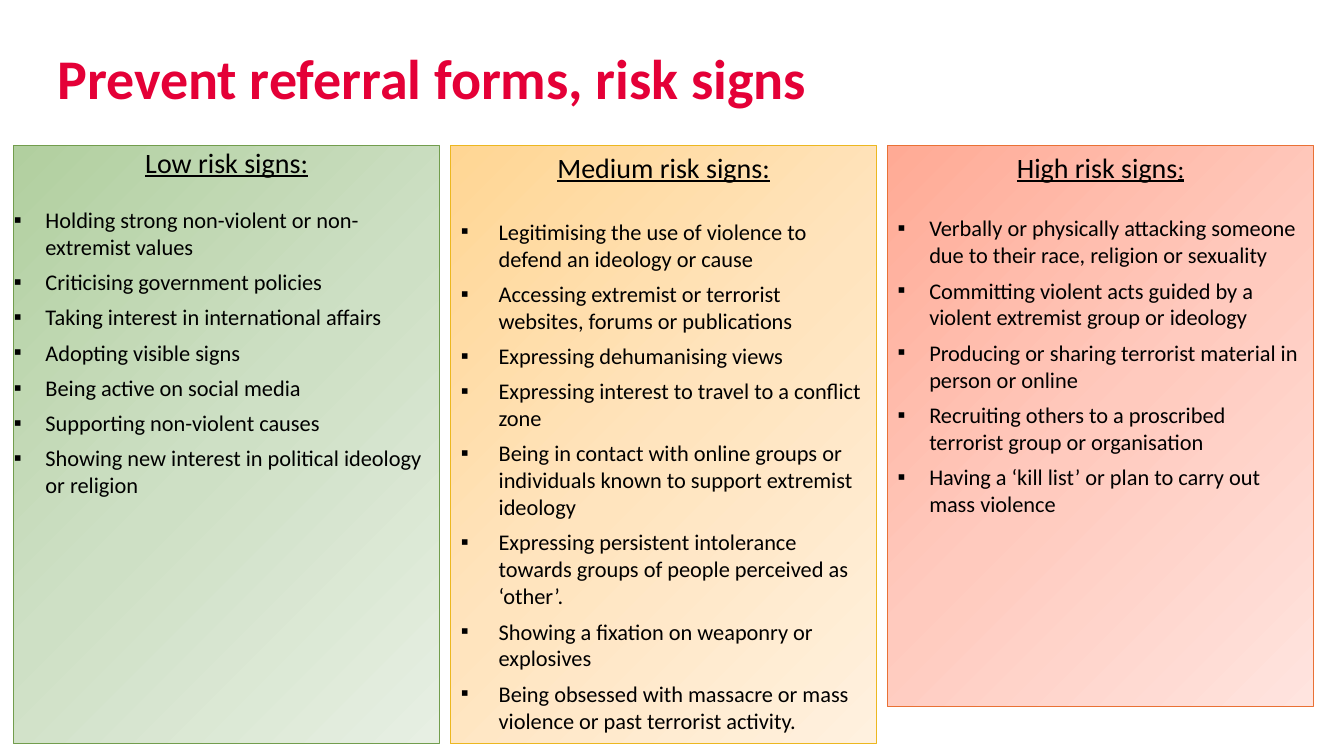
import copy
import pptx
import pptx.util
import pptx.dml.color
import pptx.enum.shapes
import pptx.enum.text
import pptx.oxml
import pptx.oxml.ns

Pt = pptx.util.Pt

# Content
HEADLINE = "Prevent referral forms, risk signs"
RISK_LEVELS = [
    {
        "heading": [("Low risk signs:", 20)],
        "signs": [
            "Holding strong non-violent or non-extremist values",
            "Criticising government policies",
            "Taking interest in international affairs",
            "Adopting visible signs",
            "Being active on social media",
            "Supporting non-violent causes",
            "Showing new interest in political ideology or religion",
        ],
        "gradient": ("B1CF9F", "CEE0C5", "E7EFE3"), "outline": "729D4D",
        "height": 427.7, "inset": (0, 0), "indent": 22.5, "heading_gap": 19.5,
    },
    {
        "heading": [("Medium risk signs:", 20)],
        "signs": [
            "Legitimising the use of violence to defend an ideology or cause",
            "Accessing extremist or terrorist websites, forums or publications",
            "Expressing dehumanising views",
            "Expressing interest to travel to a conflict zone",
            "Being in contact with online groups or individuals known to support extremist ideology",
            "Expressing persistent intolerance towards groups of people perceived as ‘other’.",
            "Showing a fixation on weaponry or explosives",
            "Being obsessed with massacre or mass violence or past terrorist activity.",
        ],
        "gradient": ("FFD694", "FFE4BE", "FFF1DF"), "outline": "ECB720",
        "height": 427.7, "inset": (7.2, 3.6), "indent": 27, "heading_gap": 24.4,
    },
    {
        "heading": [("High risk signs", 20), (":", 18)],
        "signs": [
            "Verbally or physically attacking someone due to their race, religion or sexuality",
            "Committing violent acts guided by a violent extremist group or ideology",
            "Producing or sharing terrorist material in person or online",
            "Recruiting others to a proscribed terrorist group or organisation",
            "Having a ‘kill list’ or plan to carry out mass violence",
        ],
        "gradient": ("FFAA95", "FFCABE", "FFE4DF"), "outline": "E97135",
        "height": 401, "inset": (7.2, 3.6), "indent": 22.5, "heading_gap": 22,
    },
]

THEME = {"font": "Calibri", "headline": "E40037", "text": "000000",
         "headline_size": 40, "sign_size": 16}

# Layout
PANEL_LEFT, PANEL_TOP, PANEL_WIDTH, PANEL_STEP = 10, 103.7, 304, 312.1


def rgb(value):
    return pptx.dml.color.RGBColor.from_string(value)


def add_run(paragraph, text, size, color, bold=False, underline=False):
    run = paragraph.add_run()
    run.text = text
    run.font.name = THEME["font"]
    run.font.size = Pt(size)
    run.font.bold = bold
    run.font.underline = underline
    run.font.color.rgb = rgb(color)


def set_frame(frame, inset_x, inset_y):
    frame.word_wrap = True
    frame.auto_size = pptx.enum.text.MSO_AUTO_SIZE.NONE
    frame.vertical_anchor = pptx.enum.text.MSO_ANCHOR.TOP
    frame.margin_left = frame.margin_right = Pt(inset_x)
    frame.margin_top = frame.margin_bottom = Pt(inset_y)


def add_bullet(paragraph, indent):
    properties = paragraph._p.get_or_add_pPr()
    properties.set("marL", str(int(Pt(indent))))
    properties.set("indent", str(-int(Pt(indent))))
    namespace = pptx.oxml.ns.nsdecls("a")
    for element in ('a:buFont {} typeface="Arial"', 'a:buChar {} char="▪"'):
        properties.append(pptx.oxml.parse_xml(f"<{element.format(namespace)}/>"))


def fill_gradient(panel, colors):
    panel.fill.gradient()
    panel.fill.gradient_angle = 315
    stop_list = panel._element.spPr.find(".//" + pptx.oxml.ns.qn("a:gsLst"))
    stop_list.insert(1, copy.deepcopy(stop_list[0]))
    for stop, color, position in zip(panel.fill.gradient_stops, colors, (0, 0.5, 1)):
        stop.color.rgb = rgb(color)
        stop.position = position


def add_panel(slide, level, left):
    panel = slide.shapes.add_shape(
        pptx.enum.shapes.MSO_SHAPE.RECTANGLE,
        Pt(left), Pt(PANEL_TOP), Pt(PANEL_WIDTH), Pt(level["height"]))
    panel.shadow.inherit = False
    fill_gradient(panel, level["gradient"])
    panel.line.color.rgb = rgb(level["outline"])
    panel.line.width = Pt(0.75)
    set_frame(panel.text_frame, *level["inset"])

    heading = panel.text_frame.paragraphs[0]
    heading.alignment = pptx.enum.text.PP_ALIGN.CENTER
    heading.space_after = Pt(level["heading_gap"])
    for text, size in level["heading"]:
        add_run(heading, text, size, THEME["text"], underline=True)

    for text in level["signs"]:
        sign = panel.text_frame.add_paragraph()
        sign.alignment = pptx.enum.text.PP_ALIGN.LEFT
        sign.space_after = Pt(6)
        add_bullet(sign, level["indent"])
        add_run(sign, text, THEME["sign_size"], THEME["text"])


def main():
    deck = pptx.Presentation()
    deck.slide_width, deck.slide_height = Pt(960), Pt(540)
    slide = deck.slides.add_slide(deck.slide_layouts.get_by_name("Title Only"))

    # Headline
    headline = slide.shapes.title
    headline.left, headline.top = Pt(41), Pt(31)
    headline.width, headline.height = Pt(831.6), Pt(49)
    set_frame(headline.text_frame, 0, 0)
    paragraph = headline.text_frame.paragraphs[0]
    paragraph.alignment = pptx.enum.text.PP_ALIGN.LEFT
    add_run(paragraph, HEADLINE, THEME["headline_size"], THEME["headline"], bold=True)

    # Risk panels
    for column, level in enumerate(RISK_LEVELS):
        add_panel(slide, level, PANEL_LEFT + column * PANEL_STEP)

    deck.save("out.pptx")


if __name__ == "__main__":
    main()
